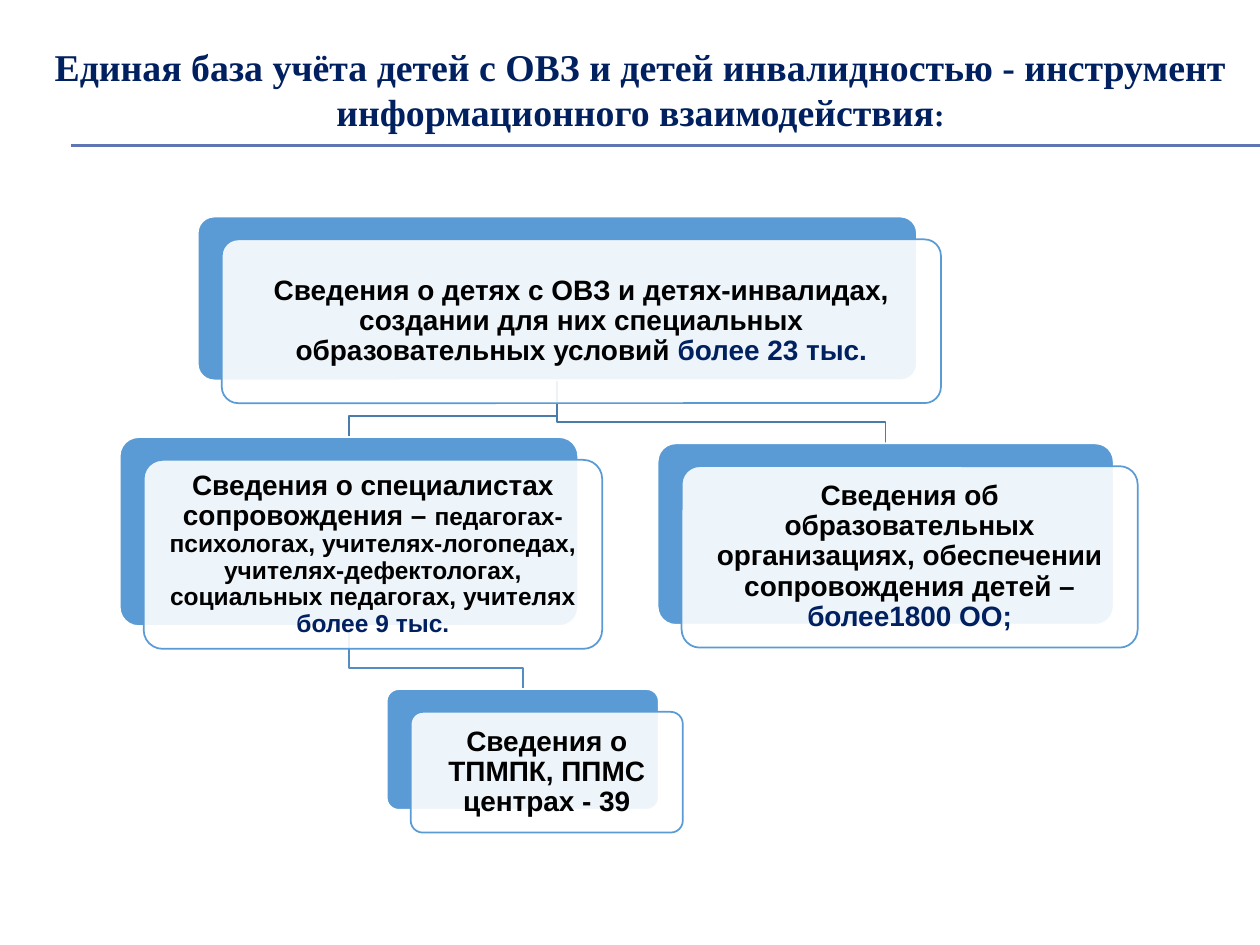
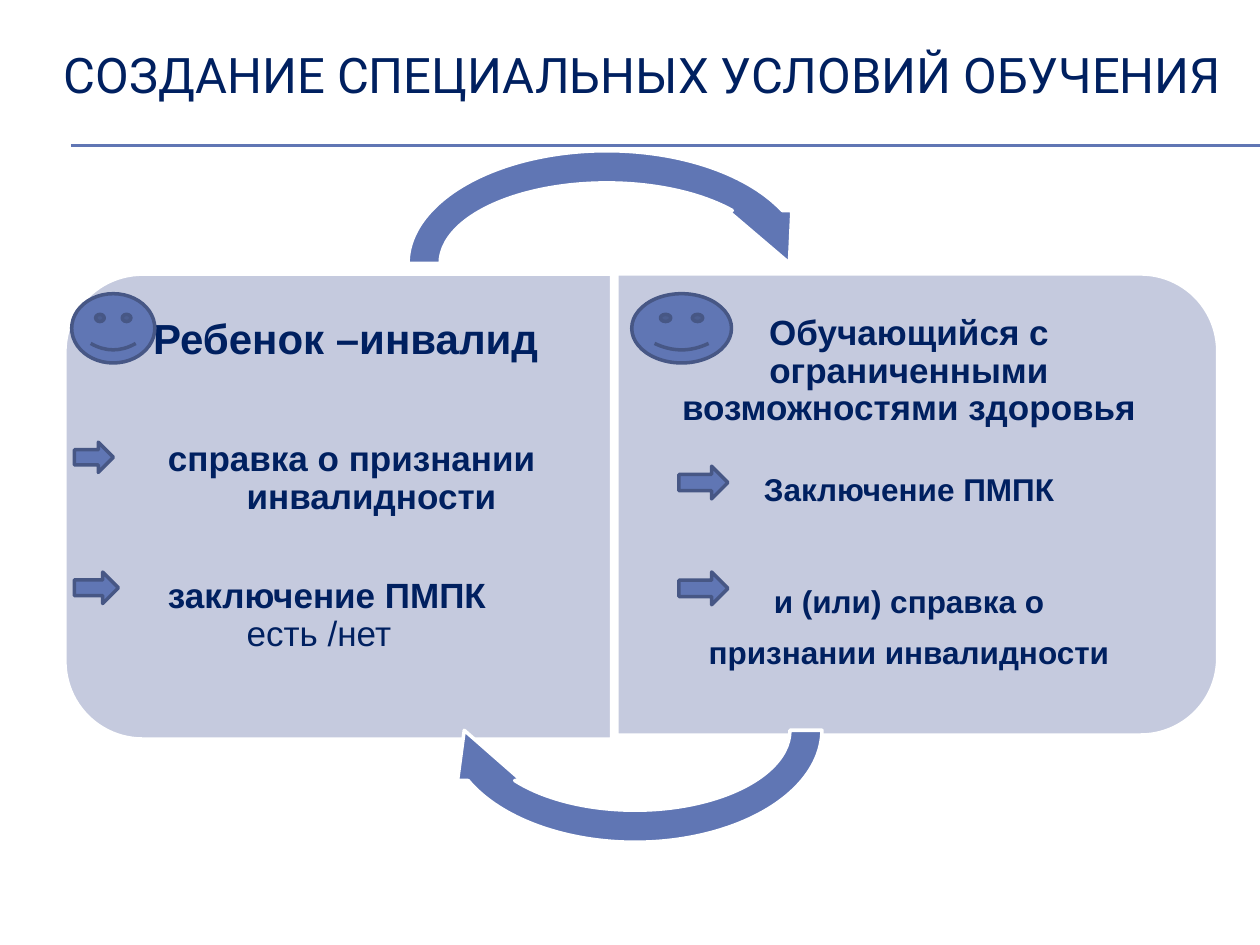
from lxml import etree
from pptx import Presentation
from pptx import util as u
from pptx.dml.color import RGBColor
from pptx.enum import shapes, text
from pptx.oxml.ns import qn

Pt = u.Pt
PRESET = shapes.MSO_SHAPE
CENTER, LEFT = text.PP_ALIGN.CENTER, text.PP_ALIGN.LEFT
MIDDLE, TOP = text.MSO_ANCHOR.MIDDLE, text.MSO_ANCHOR.TOP
COLORS = {
    "navy": "002060", "black": "000000", "white": "FFFFFF", "accent": "6076B4",
    "outline": "475785", "panel": "C5CADE", "card": "5B9BD5",
    "branch": "497CAB", "twig": "538DC1",
}


def draw(slide, preset, frame, fill, line, width, rotation=0):
    shape = slide.shapes.add_shape(preset, *map(Pt, frame))
    shape.shadow.inherit = False
    shape.rotation = rotation
    shape.fill.solid()
    shape.fill.fore_color.rgb = RGBColor.from_string(COLORS[fill])
    shape.line.color.rgb = RGBColor.from_string(COLORS[line])
    shape.line.width = Pt(width)
    return shape


def write(shape, paragraphs, insets, anchor, font="Arial", spacing=0.9):
    frame = shape.text_frame
    frame.word_wrap = True
    frame.vertical_anchor = anchor
    frame.margin_left, frame.margin_top, frame.margin_right, frame.margin_bottom = map(Pt, insets)
    for number, (align, indent, gap, runs) in enumerate(paragraphs):
        paragraph = frame.add_paragraph() if number else frame.paragraphs[0]
        paragraph.alignment = align
        paragraph.line_spacing = spacing
        paragraph.space_before = Pt(gap)
        if indent:
            properties = paragraph._p.get_or_add_pPr()
            properties.set("marL", str(Pt(indent)))
            properties.set("indent", "0")
        for words, size, color, bold in runs:
            run = paragraph.add_run()
            run.text = words
            run.font.name = font
            run.font.size = Pt(size)
            run.font.bold = bold
            run.font.color.rgb = RGBColor.from_string(COLORS[color])


deck = Presentation()
deck.slide_width, deck.slide_height = Pt(720), Pt(540)

headings = [
    ((24, 18, 684, 66), "Times New Roman", [
        ("Единая база учёта детей с ОВЗ и детей инвалидностью - "
         "инструмент информационного взаимодействия", 21.6, "navy", True),
        (":", 18, "navy", True)]),
    ((25, 9.5, 684, 66), "Roboto", [
        ("СОЗДАНИЕ СПЕЦИАЛЬНЫХ УСЛОВИЙ ОБУЧЕНИЯ", 28, "navy", False)]),
]
for place, font, runs in headings:
    slide = deck.slides.add_slide(deck.slide_layouts[6])
    for y in (82.8, 83.5):
        rule = slide.shapes.add_connector(
            shapes.MSO_CONNECTOR.STRAIGHT, Pt(40.5), Pt(y), Pt(720), Pt(y))
        rule.line.color.rgb = RGBColor.from_string(COLORS["accent"])
        rule.line.width = Pt(0.75)
        etree.SubElement(rule._element.spPr, qn("a:effectLst"))
    heading = slide.shapes.add_textbox(*map(Pt, place))
    write(heading, [(CENTER, 0, 0, runs)], (7.2, 3.6, 7.2, 3.6), MIDDLE, font, 1)

database, conditions = deck.slides

cards = {
    "children": ((113, 123.8, 411, 93.6), [[
        ("Сведения о детях с ОВЗ и детях-инвалидах, создании для них специальных "
         "образовательных условий ", 16, "black", True),
        ("более 23 тыс.", 16, "navy", True)]]),
    "specialists": ((68.4, 249.8, 262, 108), [[
        ("Сведения о специалистах сопровождения – ", 16, "black", True),
        ("педагогах-психологах, учителях-логопедах, учителях-дефектологах, "
         "социальных педагогах, учителях ", 14, "black", True),
        ("более 9 тыс.", 14, "navy", True)]]),
    "centres": ((221, 393.8, 155.5, 69), [[
        ("Сведения о ТПМПК, ППМС центрах - 39", 16, "black", True)]]),
    "organisations": ((375.8, 253.4, 260.6, 103.7), [
        [("Сведения об образовательных организациях, обеспечении сопровождения детей –",
          16, "black", True)],
        [("более1800 ОО;", 16, "navy", True)]]),
}

branches = [("children", "organisations", "branch"),
            ("specialists", "centres", "twig"),
            ("children", "specialists", "branch")]
for parent, child, color in branches:
    x, y, width, height = cards[parent][0]
    child_x, child_y, child_width, _ = cards[child][0]
    start, end = x + width / 2, child_x + child_width / 2
    bend = child_y - 12
    outline = database.shapes.build_freeform(Pt(start), Pt(y + height))
    outline.add_line_segments(
        [(Pt(start), Pt(bend)), (Pt(end), Pt(bend)), (Pt(end), Pt(child_y))], close=False)
    branch = outline.convert_to_shape()
    branch.shadow.inherit = False
    branch.fill.background()
    branch.line.color.rgb = RGBColor.from_string(COLORS[color])
    branch.line.width = Pt(1)

for (x, y, width, height), lines in cards.values():
    back = draw(database, PRESET.ROUNDED_RECTANGLE, (x, y, width, height), "card", "white", 1)
    front = draw(database, PRESET.ROUNDED_RECTANGLE,
                 (x + 13.7, y + 13, width, height), "white", "card", 1)
    back.adjustments[0] = front.adjustments[0] = 0.1
    tint = front._element.spPr.find(qn("a:solidFill"))[0]
    etree.SubElement(tint, qn("a:alpha"), val="90000")
    write(front, [(CENTER, 0, 0, runs) for runs in lines], (5, 5, 5, 5), MIDDLE)

panels = [
    ((60.5, 133.2, 265.7, 312.5), 270, (49.7, 169.9, 299.5, 239.8), (7.2, 12.2, 10.8, 12.2), [
        (CENTER, 0, 0, [("Ребенок –инвалид", 24, "navy", True)]),
        (LEFT, 39.2, 44, [("справка о признании", 20, "navy", True)]),
        (LEFT, 84.2, 0, [("инвалидности", 20, "navy", True)]),
        (LEFT, 39.2, 35.5, [("заключение ПМПК", 20, "navy", True)]),
        (LEFT, 84.2, 0, [("есть /нет", 20, "navy", False)])]),
    ((392.4, 116.6, 263.5, 343.4), 90, (352.8, 169.9, 330.5, 237.6), (8.6, 10.1, 5.8, 10.1), [
        (CENTER, 0, 0, [("Обучающийся с ограниченными возможностями здоровья",
                         20, "navy", True)]),
        (CENTER, 0, 26, [("Заключение ПМПК", 18, "navy", True)]),
        (CENTER, 0, 45, [("и (или) справка о", 18, "navy", True)]),
        (CENTER, 0, 9.6, [("признании инвалидности", 18, "navy", True)])]),
]
for place, rotation, text_place, insets, lines in panels:
    panel = draw(conditions, PRESET.ROUND_2_SAME_RECTANGLE, place, "panel", "white", 2, rotation)
    panel.adjustments[0] = 0.167
    write(conditions.shapes.add_textbox(*map(Pt, text_place)), lines, insets, TOP)

for place, rotation in [((224, 77, 245.5, 147), 0), ((247, 344.2, 231.8, 146.2), 180)]:
    draw(conditions, PRESET.CIRCULAR_ARROW, place, "accent", "white", 2, rotation)

for x, width in [(41, 47.5), (361, 57)]:
    draw(conditions, PRESET.SMILEY_FACE, (x, 167.8, width, 39.6), "accent", "outline", 2)

for place in [(42.5, 252.7, 22.3, 17.3), (42.5, 326.9, 25.2, 18),
              (388, 266.4, 28, 18.7), (388, 326.9, 28, 18.7)]:
    draw(conditions, PRESET.RIGHT_ARROW, place, "accent", "outline", 2)

deck.save("out.pptx")
